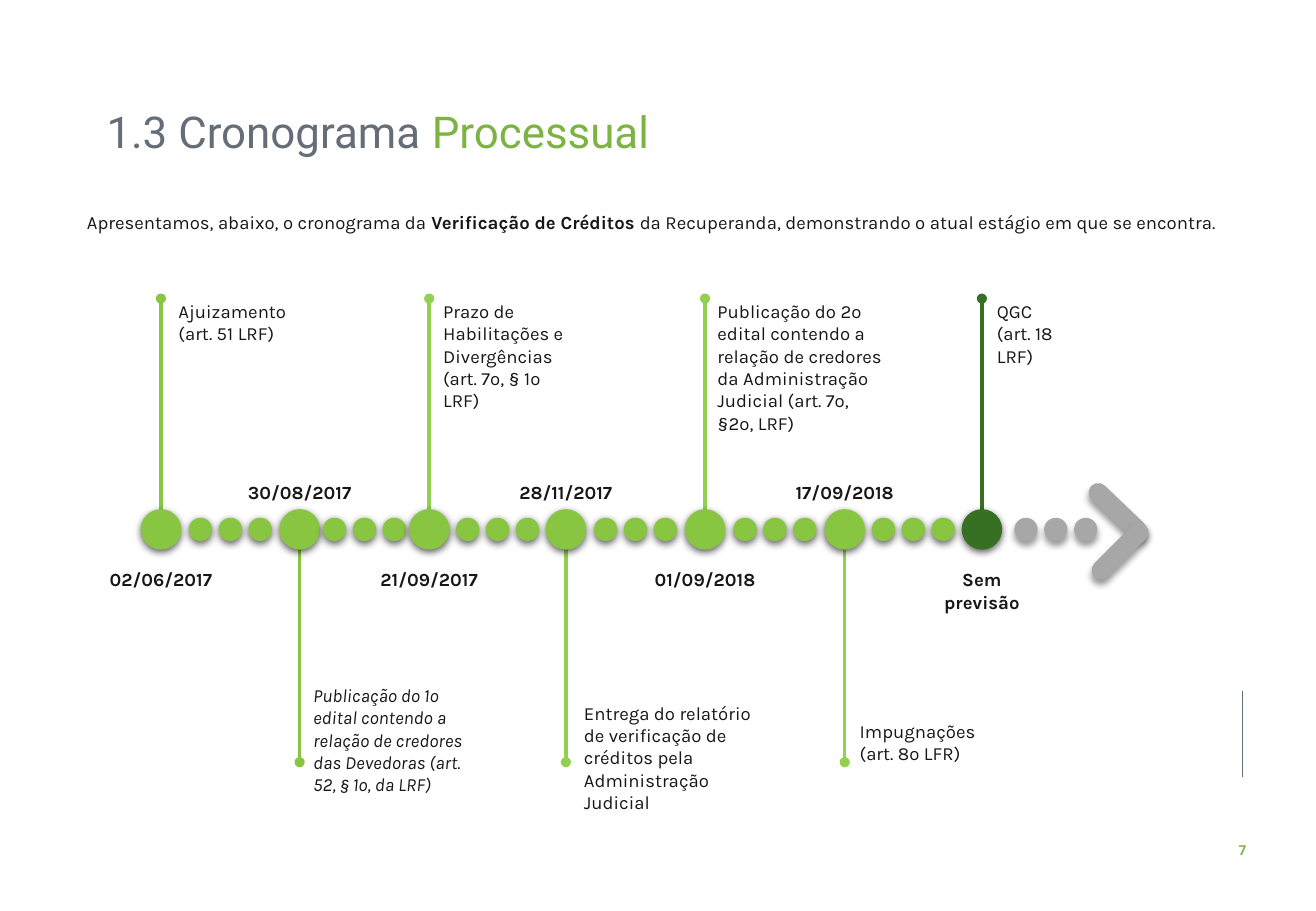
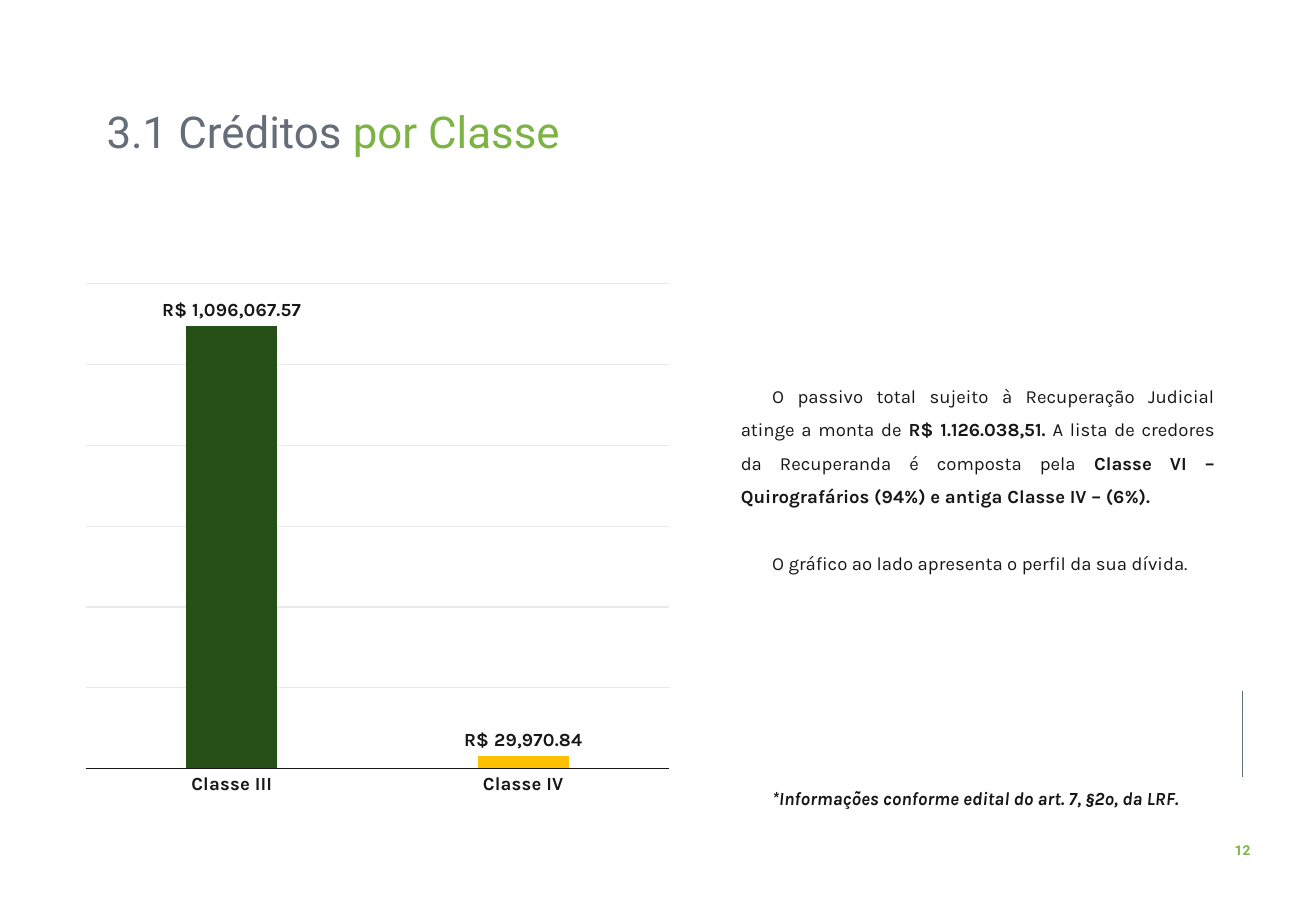
import pptx
import pptx.chart.data
import pptx.dml.color
import pptx.enum.chart
import pptx.enum.shapes
import pptx.enum.text
import pptx.oxml
import pptx.oxml.ns
import pptx.util

# Grid: 130 columns by 90 rows of square cells
CELL = pptx.util.Inches(1) // 12
GREEN, LIME, BRIGHT, DARK = "7CB342", "88C641", "92D050", "377023"
SLATE, GRAY, INK = "656D78", "A7A7A7", "181717"
LEFT = pptx.enum.text.PP_ALIGN.LEFT
CENTER = pptx.enum.text.PP_ALIGN.CENTER
JUSTIFY = pptx.enum.text.PP_ALIGN.JUSTIFY
ELLIPSE = pptx.enum.shapes.MSO_SHAPE.OVAL
ROUNDED = pptx.enum.shapes.MSO_SHAPE.ROUNDED_RECTANGLE


def color(hexadecimal):
    return pptx.dml.color.RGBColor.from_string(hexadecimal)


def add_text(slide, box, paragraphs, size=11, font="Karla", align=LEFT,
             spacing=1.0, indent=0, gaps=(0, 0, 0)):
    """Each paragraph is a list of runs: (text, style letters, colour)."""
    shape = slide.shapes.add_textbox(*[round(value * CELL) for value in box])
    frame = shape.text_frame
    frame.word_wrap = True
    for index, runs in enumerate(paragraphs):
        paragraph = frame.add_paragraph() if index else frame.paragraphs[0]
        paragraph.alignment = align
        paragraph.line_spacing = spacing
        if indent:
            paragraph._p.get_or_add_pPr().set("indent", str(round(indent * CELL)))
        if gaps[index]:
            paragraph.space_before = pptx.util.Pt(gaps[index])
        for text, style, run_color in runs:
            run = paragraph.add_run()
            run.text = text
            run.font.name = font
            run.font.size = pptx.util.Pt(size)
            run.font.bold = "b" in style
            run.font.italic = "i" in style
            run.font.color.rgb = color(run_color)


presentation = pptx.Presentation()
presentation.slide_width = 130 * CELL
presentation.slide_height = 90 * CELL

# Shared title, footer rule and page number
lines = []  # slide, x, from row, to row, colour, width, round head
slides = []
for title, accent, number in [("1.3 Cronograma ", "Processual", "7"),
                              ("3.1 Créditos ", "por Classe", "12")]:
    slide = presentation.slides.add_slide(presentation.slide_layouts[6])
    slides.append(slide)
    lines.append((slide, 122.75, 68.25, 76.8, SLATE, 0.5, False))
    add_text(slide, (9.35, 10.3, 98.2, 6.4),
             [[(title, "", SLATE), (accent, "", GREEN)]],
             size=26, font="Roboto", spacing=0.9)
    add_text(slide, (120, 82.55, 5.5, 2.9), [[(number, "b", GREEN)]],
             size=8.1, font="Roboto", align=CENTER)
timeline, credits = slides

# Timeline: introduction
add_text(timeline, (3.7, 19.9, 122, 3.6),
         [[("Apresentamos, abaixo, o cronograma da ", "", INK),
           ("Verificação de Créditos ", "b", INK),
           ("da Recuperanda, demonstrando o atual estágio em que se encontra.", "", INK)]],
         align=JUSTIFY, spacing=1.14, indent=3.7)

# Timeline: centre, stem colour, date, label left, top, width, lines, style, text
AXIS, BIG, SMALL, DOT_STEP = 52.3, 4, 2.3, 2.95
UP_HEAD, DOWN_HEAD, UP_LABEL = 29.5, 75.3, 29.05
milestones = [
    (15.9, LIME, "02/06/2017", 16.45, UP_LABEL, 13.45, 2, "",
     ["Ajuizamento (art. 51 LRF)"]),
    (29.6, LIME, "30/08/2017", 29.75, 67, 17.2, 5, "i",
     ["Publicação do 1º edital contendo a relação de credores das Devedoras "
      "(art. 52, § 1º, da LRF)"]),
    (42.4, BRIGHT, "21/09/2017", 42.6, UP_LABEL, 15.6, 5, "",
     ["Prazo de Habilitações e Divergências (art. 7º, § 1º LRF)"]),
    (55.9, BRIGHT, "28/11/2017", 56.5, 68.75, 21.35, 4, "",
     ["Entrega do relatório de verificação de créditos pela Administração Judicial"]),
    (69.65, BRIGHT, "01/09/2018", 69.7, UP_LABEL, 18.85, 6, "",
     ["Publicação do 2º edital contendo a relação de credores da "
      "Administração Judicial (art. 7º, §2º, LRF)"]),
    (83.45, BRIGHT, "17/09/2018", 83.75, 70.55, 14.9, 2, "",
     ["Impugnações (art. 8º LFR)"]),
    (97, DARK, "Sem previsão", 97.3, UP_LABEL, 11.15, 3, "",
     ["QGC", "(art. 18 LRF)"]),
]
next_centers = [milestone[0] for milestone in milestones[1:]] + [111.6]
marks = []  # geometry, centre x, centre y, width, height, rotation, colour
for index, (center, stem, date, left, top, width, count, style, texts) in enumerate(milestones):
    last = index == len(milestones) - 1
    upward = index % 2 == 0
    lines.append((timeline, center, UP_HEAD if upward else DOWN_HEAD, AXIS, stem, 2, True))
    marks.append((ELLIPSE, center, AXIS, BIG, BIG, 0, DARK if last else LIME))
    middle = (center + next_centers[index]) / 2
    for step in (-1, 0, 1):
        marks.append((ELLIPSE, middle + step * DOT_STEP, AXIS, SMALL, SMALL, 0,
                      GRAY if last else LIME))
    add_text(timeline, (left, top, width, 1.2 + 2.22 * count),
             [[(text, style, INK)] for text in texts])
    add_text(timeline, (center - 6.65, 55.55 if upward else 46.9, 13.3, 3.5),
             [[(date, "b", INK)]], align=CENTER)

# Chevron at the end of the timeline
marks.append((ROUNDED, 110.4, 50.5, 7.2, 1.9, 43.7, GRAY))
marks.append((ROUNDED, 110.65, 54.45, 7.2, 1.9, 315, GRAY))

# Rules and stems
for slide, x, start, end, line_color, width, has_head in lines:
    connector = slide.shapes.add_connector(
        pptx.enum.shapes.MSO_CONNECTOR.STRAIGHT,
        *[round(value * CELL) for value in (x, start, x, end)])
    connector.line.color.rgb = color(line_color)
    connector.line.width = pptx.util.Pt(width)
    if has_head:
        head = pptx.oxml.parse_xml(
            f'<a:headEnd {pptx.oxml.ns.nsdecls("a")} type="oval"/>')
        connector.line._get_or_add_ln().append(head)
    connector._element.spPr.append(
        pptx.oxml.parse_xml(f'<a:effectLst {pptx.oxml.ns.nsdecls("a")}/>'))

# Dots and chevron bars, with soft shadows
for geometry, x, y, width, height, rotation, fill in marks:
    shape = timeline.shapes.add_shape(
        geometry, *[round(value * CELL)
                    for value in (x - width / 2, y - height / 2, width, height)])
    shape.rotation = rotation
    if geometry == ROUNDED:
        shape.adjustments[0] = 0.5
    shape.fill.solid()
    shape.fill.fore_color.rgb = color(fill)
    shape.line.fill.background()
    shape.shadow.inherit = False
    blur, distance, alpha = (4, 3, 40) if fill == GRAY else (4.5, 1.5, 63)
    effects = shape._element.spPr.find(pptx.oxml.ns.qn("a:effectLst"))
    effects.append(pptx.oxml.parse_xml(
        f'<a:outerShdw {pptx.oxml.ns.nsdecls("a")} blurRad="{pptx.util.Pt(blur)}" '
        f'dist="{pptx.util.Pt(distance)}" dir="5400000" rotWithShape="0">'
        f'<a:srgbClr val="000000"><a:alpha val="{alpha * 1000}"/></a:srgbClr>'
        '</a:outerShdw>'))

# Credits: column chart
chart_data = pptx.chart.data.CategoryChartData()
chart_data.categories = ["Classe III", "Classe IV"]
chart_data.add_series("Series 1", [1096067.57, 29970.84])
chart = credits.shapes.add_chart(
    pptx.enum.chart.XL_CHART_TYPE.COLUMN_CLUSTERED,
    *[round(value * CELL) for value in (7.3, 27, 60, 52.7)], chart_data).chart
chart.has_title = False
chart.has_legend = False

value_axis = chart.value_axis
value_axis.visible = False
value_axis.minimum_scale = 0
value_axis.maximum_scale = 1200000
value_axis.major_unit = 200000
value_axis.has_major_gridlines = True
grid_line = value_axis.major_gridlines.format.line
category_axis = chart.category_axis
category_axis.major_tick_mark = pptx.enum.chart.XL_TICK_MARK.NONE
for line, line_color in [(grid_line, "E7E9EB"), (category_axis.format.line, INK)]:
    line.color.rgb = color(line_color)
    line.width = pptx.util.Pt(0.75)

plot = chart.plots[0]
plot.gap_width = 219
plot.overlap = -27
plot.vary_by_categories = False
plot.has_data_labels = True
labels = plot.data_labels
labels.show_value = True
labels.number_format = '"R$"\\ #,##0.00'
labels.number_format_is_linked = False
labels.position = pptx.enum.chart.XL_LABEL_POSITION.OUTSIDE_END
for font, bold in [(chart.font, False), (category_axis.tick_labels.font, True),
                   (labels.font, True)]:
    font.name = "Karla"
    font.size = pptx.util.Pt(11)
    font.bold = bold
    font.color.rgb = color(INK)
for index, bar_color in enumerate(["264F17", "FFC000"]):
    bar = plot.series[0].points[index].format.fill
    bar.solid()
    bar.fore_color.rgb = color(bar_color)

# Credits: commentary, with gaps of one and six lines
LINE = 19.85
add_text(credits, (72, 36.35, 49.2, 44.15),
         [[("O passivo total sujeito à Recuperação Judicial atinge a monta de ", "", INK),
           ("R$ 1.126.038,51.", "b", INK),
           (" A lista de credores da Recuperanda é composta pela ", "", INK),
           ("Classe VI – Quirografários (94%) e antiga Classe IV – (6%).", "b", INK)],
          [("O gráfico ao lado apresenta o perfil da sua dívida.", "", INK)],
          [("*Informações conforme edital do art. 7, §2º, da LRF.", "bi", INK)]],
         align=JUSTIFY, spacing=1.5, indent=3.1, gaps=(0, LINE, 6 * LINE))

presentation.save("out.pptx")
